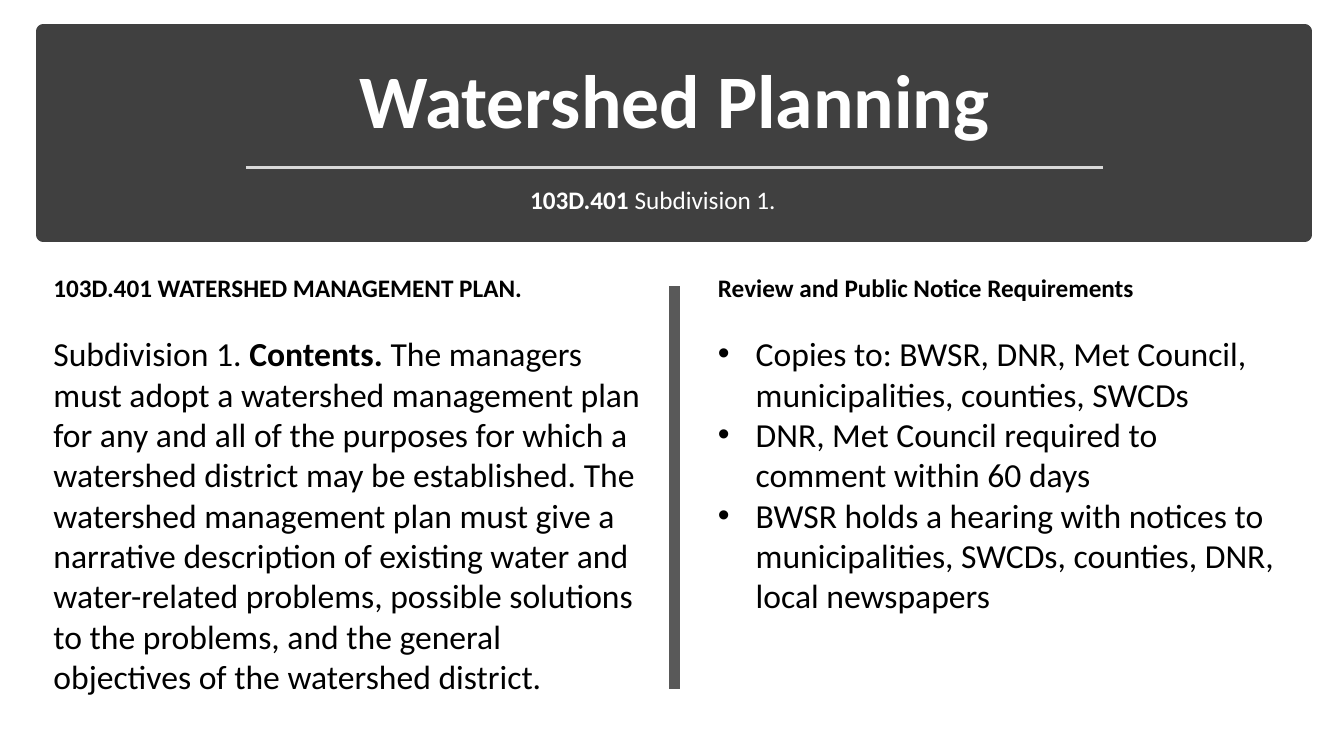
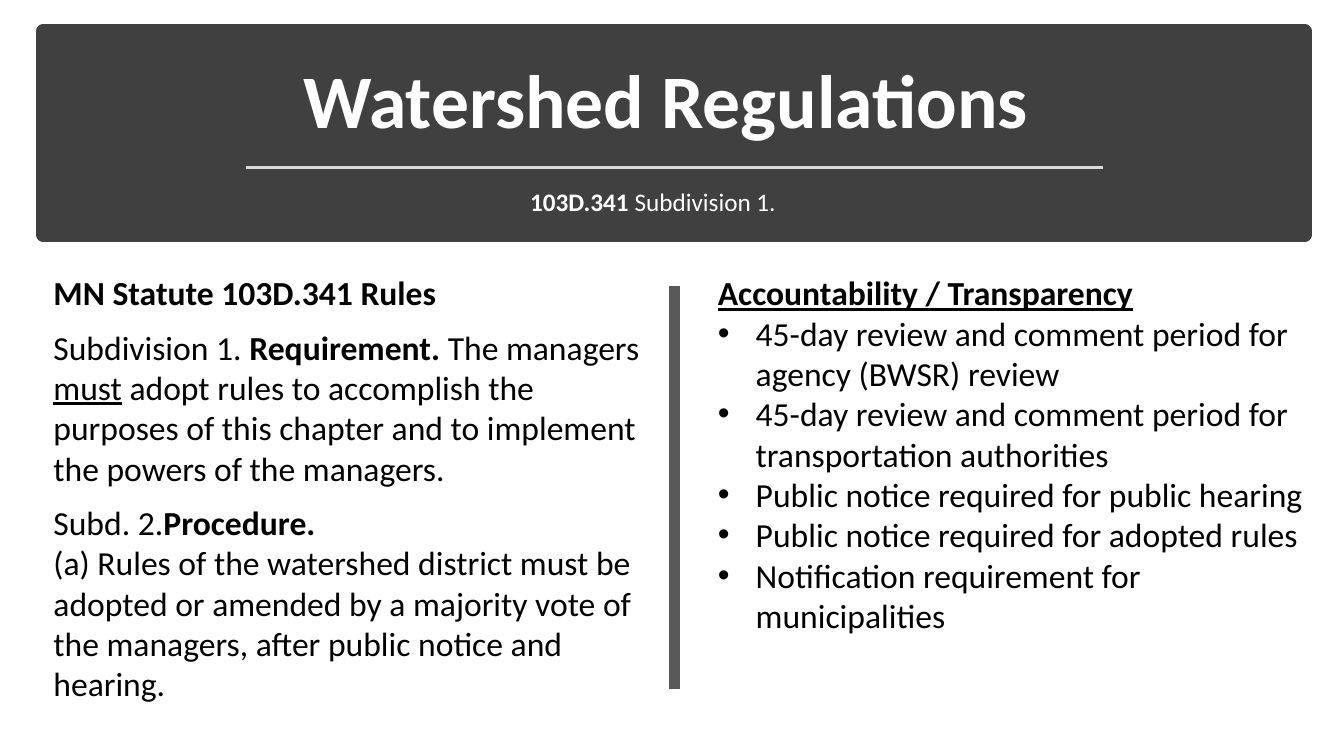
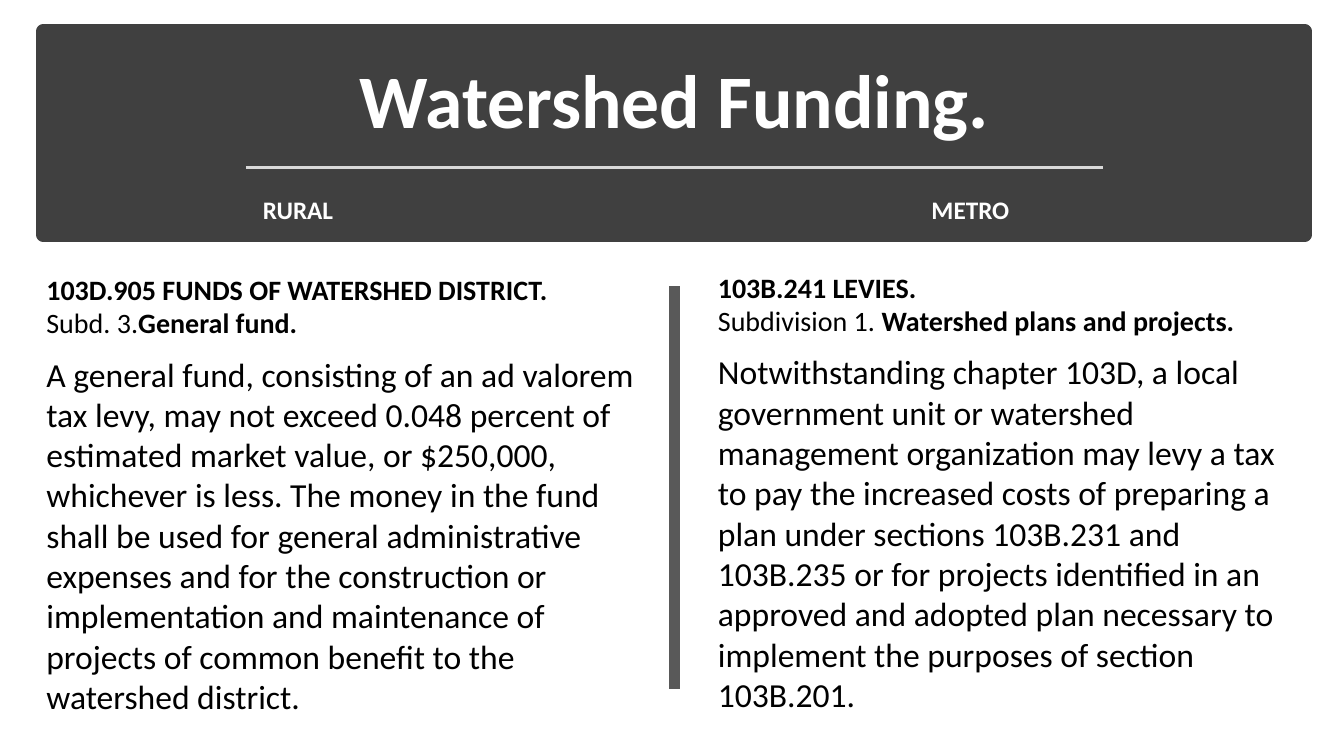
from lxml import etree
from pptx import Presentation
from pptx.dml.color import RGBColor
from pptx.enum.shapes import MSO_CONNECTOR, MSO_SHAPE
from pptx.enum.text import MSO_ANCHOR, MSO_AUTO_SIZE, PP_ALIGN
from pptx.oxml.ns import qn
from pptx.util import Pt

STRAIGHT = MSO_CONNECTOR.STRAIGHT
RECTANGLE = MSO_SHAPE.RECTANGLE
BOTTOM, TOP = MSO_ANCHOR.BOTTOM, MSO_ANCHOR.TOP
NO_FIT = MSO_AUTO_SIZE.NONE
CENTER = PP_ALIGN.CENTER

PX = 9144  # 100 px to the inch
FONT = "Calibri"
COLORS = {"band": "404040", "rule": "D9D9D9", "divider": "595959",
          "light": "FFFFFF", "text": "000000"}
TWO_CONTENT = 3

BAND = (43, 31, 1251, 202)
TITLE = (60, 47, 1218, 102)
RULE = (244, 166, 1094, 166)
DIVIDER = (669, 284, 669, 684)

# A run is (text, style), where style holds "b" for bold and "u" for underline.
# A paragraph is (size, space before, bulleted, runs).


def para(size, *runs, gap=0):
    return size, gap, False, runs


def bullets(*items):
    return [(24, 0, True, [(item, "")]) for item in items]


SLIDES = [
    {
        "title": "Watershed Planning",
        "labels": [((516, 178, 266, 40),
                    [("103D.401 ", "b"), ("Subdivision 1.", "")])],
        "columns": [
            ((43, 265, 605, 434), [
                para(18, ("103D.401 WATERSHED MANAGEMENT PLAN.", "b")),
                para(24, ("Subdivision 1. ", ""), ("Contents. ", "b"),
                     ("The managers must adopt a watershed management plan for any and all of "
                      "the purposes for which a watershed district may be established. The "
                      "watershed management plan must give a narrative description of existing "
                      "water and water-related problems, possible solutions to the problems, "
                      "and the general objectives of the watershed district.", ""), gap=22),
            ]),
            ((702, 265, 592, 384), [
                para(18, ("Review and Public Notice Requirements", "b")),
                (24, 22, True, [("Copies to: BWSR, DNR, Met Council, municipalities, "
                                 "counties, SWCDs", "")]),
                *bullets("DNR, Met Council required to comment within 60 days",
                         "BWSR holds a hearing with notices to municipalities, SWCDs, "
                         "counties, DNR, local newspapers"),
            ]),
        ],
    },
    {
        "title": "Watershed Regulations ",
        "labels": [((516, 180, 266, 40),
                    [("103D.341 ", "b"), ("Subdivision 1.", "")])],
        "columns": [
            ((43, 265, 605, 441), [
                para(24, ("MN Statute 103D.341 Rules", "b")),
                para(24, ("Subdivision 1. ", ""), ("Requirement. ", "b"),
                     ("The managers ", ""), ("must", "u"),
                     (" adopt rules to accomplish the purposes of this chapter and to "
                      "implement the powers of the managers.", ""), gap=10),
                para(24, ("Subd. 2.", ""), ("Procedure.", "b"), gap=10),
                para(24, ("(a) Rules of the watershed district must be adopted or amended by a "
                          "majority vote of the managers, after public notice and hearing.", "")),
            ]),
            ((702, 265, 605, 404), [
                para(24, ("Accountability / Transparency", "bu")),
                *bullets("45-day review and comment period for agency (BWSR) review",
                         "45-day review and comment period for transportation authorities",
                         "Public notice required for public hearing",
                         "Public notice required for adopted rules",
                         "Notification requirement for municipalities"),
            ]),
        ],
    },
    {
        "title": "Watershed Funding.",
        "labels": [((251, 188, 91, 40), [("RURAL", "b")]),
                   ((914, 188, 98, 40), [("METRO", "b")])],
        "columns": [
            ((36, 265, 613, 454), [
                para(20, ("103D.905 FUNDS OF WATERSHED DISTRICT.", "b")),
                para(20, ("Subd. 3.", ""), ("General fund.", "b")),
                para(24, ("A general fund, consisting of an ad valorem tax levy, may not exceed "
                          "0.048 percent of estimated market value, or $250,000, whichever is "
                          "less. The money in the fund shall be used for general administrative "
                          "expenses and for the construction or implementation and maintenance "
                          "of projects of common benefit to the watershed district.", ""), gap=10),
            ]),
            ((702, 263, 605, 454), [
                para(20, ("103B.241 LEVIES.", "b")),
                para(20, ("Subdivision 1. ", ""), ("Watershed plans and projects.", "b")),
                para(24, ("Notwithstanding chapter 103D, a local government unit or watershed "
                          "management organization may levy a tax to pay the increased costs of "
                          "preparing a plan under sections 103B.231 and 103B.235 or for projects "
                          "identified in an approved and adopted plan necessary to implement the "
                          "purposes of section 103B.201.", ""), gap=10),
            ]),
        ],
    },
]


def emu(box):
    return [length * PX for length in box]


def color(name):
    return RGBColor.from_string(COLORS[name])


def place(placeholder, box):
    placeholder.left, placeholder.top, placeholder.width, placeholder.height = emu(box)
    placeholder.text_frame.auto_size = NO_FIT


def style_font(font, size, color_name, style):
    font.name, font.size = FONT, Pt(size)
    font.bold, font.underline = "b" in style, "u" in style
    font.color.rgb = color(color_name)


def add_runs(paragraph, runs, size, color_name):
    for text, style in runs:
        run = paragraph.add_run()
        run.text = text
        style_font(run.font, size, color_name, style)


def add_line(slide, ends, color_name, width):
    line = slide.shapes.add_connector(STRAIGHT, *emu(ends))
    line.line.color.rgb = color(color_name)
    line.line.width = Pt(width)
    etree.SubElement(line.element.spPr, qn("a:effectLst"))


def add_header(slide, title_text):
    """Fill the title and draw the band behind it, the rule and the divider."""
    title = slide.shapes.title
    place(title, TITLE)
    title.text_frame.text = title_text
    title.text_frame.vertical_anchor = BOTTOM
    heading = title.text_frame.paragraphs[0]
    heading.alignment, heading.line_spacing = CENTER, 0.9
    style_font(heading.runs[0].font, 54, "light", "b")

    band = slide.shapes.add_shape(RECTANGLE, *emu(BAND))
    band.shadow.inherit = False
    band.fill.solid()
    band.fill.fore_color.rgb = band.line.color.rgb = color("band")
    band.line.width = Pt(10)
    title.element.addprevious(band.element)

    add_line(slide, RULE, "rule", 1.75)
    add_line(slide, DIVIDER, "divider", 8)


def add_label(slide, box, runs):
    frame = slide.shapes.add_textbox(*emu(box)).text_frame
    frame.word_wrap = False
    add_runs(frame.paragraphs[0], runs, 18, "light")


def fill_column(body, box, paragraphs):
    place(body, box)
    frame = body.text_frame
    frame.vertical_anchor = TOP
    for index, (size, gap, bulleted, runs) in enumerate(paragraphs):
        paragraph = frame.add_paragraph() if index else frame.paragraphs[0]
        paragraph.space_before = Pt(gap)
        if not bulleted:
            properties = paragraph._p.get_or_add_pPr()
            properties.set("marL", "0")
            properties.set("indent", "0")
            etree.SubElement(properties, qn("a:buNone"))
        add_runs(paragraph, runs, size, "text")


def main():
    deck = Presentation()
    deck.slide_width, deck.slide_height = emu((1333, 750))
    for content in SLIDES:
        slide = deck.slides.add_slide(deck.slide_layouts[TWO_CONTENT])
        add_header(slide, content["title"])
        for label in content["labels"]:
            add_label(slide, *label)
        for number, column in enumerate(content["columns"], start=1):
            fill_column(slide.placeholders[number], *column)
    deck.save("out.pptx")


if __name__ == "__main__":
    main()
